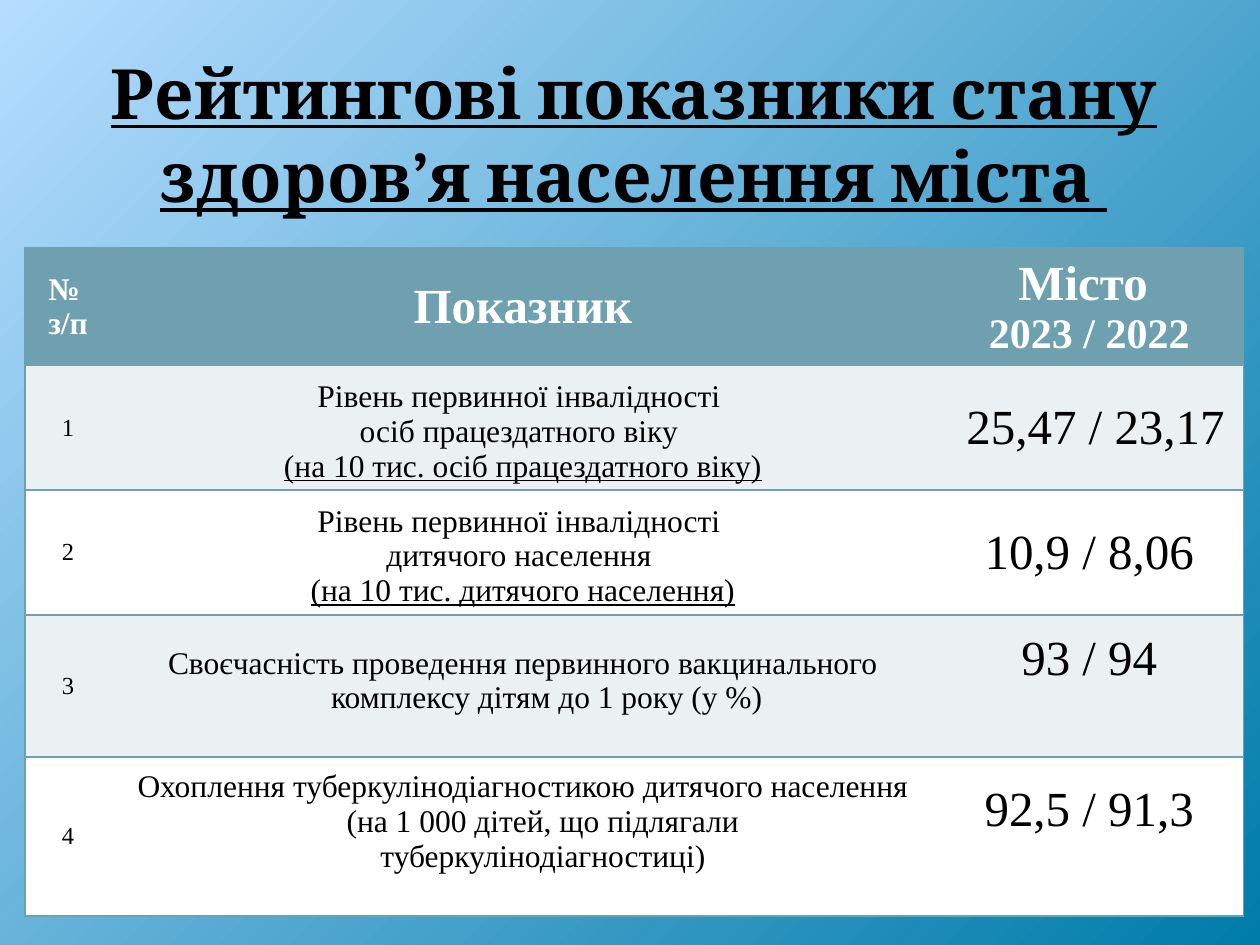
from lxml import etree
from pptx import Presentation
from pptx.dml.color import RGBColor
from pptx.enum import text as t
from pptx.oxml import ns
from pptx.util import Inches, Pt

# Content
TITLE = "Рейтингові показники стану здоров’я населення міста "
HEAD = (["№ ", "з/п"], ["Показник"], ["Місто ", "2023 / 2022"])
ROWS = [
    ("1", ["Рівень первинної інвалідності ", "осіб працездатного віку ",
           "(на 10 тис. осіб працездатного віку)"], "25,47 / 23,17"),
    ("2", ["Рівень первинної інвалідності ", "дитячого населення ",
           "(на 10 тис. дитячого населення)"], "10,9 / 8,06"),
    ("3", ["Своєчасність проведення первинного вакцинального "
           "комплексу дітям до 1 року (у %)"], "93 / 94"),
    ("4", ["Охоплення туберкулінодіагностикою дитячого населення "
           "(на 1 000 дітей, що підлягали ",
           "туберкулінодіагностиці)"], "92,5 / 91,3"),
]
WIDTHS = [0.68, 6.54, 2.45]
HEIGHTS = [0.93, 0.99, 0.99, 1.13, 1.26]
TEAL, PALE, WHITE, BLACK = "6EA0B0", "EBF0F2", "FFFFFF", "000000"
HANG = (0.38, -0.38)
PLAIN = "{2D5ABB26-0587-4C30-8999-92F81FD0307C}"


def rgb(code):
    return RGBColor.from_string(code)


def add(root, tag, **attrs):
    return etree.SubElement(root, ns.qn(tag), attrs)


def style(para, size, color, bold=False, under=False, face="Times New Roman"):
    para.alignment = t.PP_ALIGN.CENTER
    font = para.font
    font.name, font.size, font.bold = face, Pt(size), bold
    font.underline = under
    font.color.rgb = rgb(color)


def indent(para, left, first):
    props = para._p.get_or_add_pPr()
    props.set("marL", str(Inches(left)))
    props.set("indent", str(Inches(first)))


def border(cell, sides):
    props = cell._tc.get_or_add_tcPr()
    for side in sides:
        line = add(props, "a:ln" + side, w=str(Pt(1)))
        add(add(line, "a:solidFill"), "a:srgbClr", val=TEAL)


def write(cell, lines, sizes, color, bold=False):
    cell.text = "\n".join(lines)
    for para, size in zip(cell.text_frame.paragraphs, sizes):
        indent(para, *HANG)
        style(para, size, color, bold)


prs = Presentation()
prs.slide_width, prs.slide_height = Inches(10), Inches(7.5)
slide = prs.slides.add_slide(prs.slide_layouts[5])

# Background: glow from the top left corner
fill = slide.background.fill
fill.gradient()
for stop, code in zip(fill.gradient_stops, ("B5DDFF", "007CAA")):
    stop.color.rgb = rgb(code)
grad = slide.background._cSld.find(".//" + ns.qn("a:gradFill"))
grad.remove(grad.find(ns.qn("a:lin")))
add(add(grad, "a:path", path="circle"), "a:fillToRect", r="100000", b="100000")

# Title
title = slide.shapes.title
title.left, title.top = Inches(0.53), Inches(0.72)
title.width, title.height = Inches(9), Inches(1.25)
frame = title.text_frame
frame.text = TITLE
frame.word_wrap, frame.auto_size = True, t.MSO_AUTO_SIZE.NONE
frame.vertical_anchor = t.MSO_ANCHOR.MIDDLE
frame.margin_bottom = Inches(0.62)
style(frame.paragraphs[0], 39.6, BLACK, True, True, "Cambria")

# Table grid
grid = slide.shapes.add_table(len(HEIGHTS), len(WIDTHS), Inches(0.2), Inches(1.97),
                              Inches(sum(WIDTHS)), Inches(sum(HEIGHTS))).table
grid._tbl.tblPr.find(ns.qn("a:tableStyleId")).text = PLAIN
for col, width in zip(grid.columns, WIDTHS):
    col.width = Inches(width)
for r, height in enumerate(HEIGHTS):
    grid.rows[r].height = Inches(height)
    for c, sides in enumerate(("LTB", "TB", "RTB")):
        cell = grid.cell(r, c)
        border(cell, sides)
        cell.fill.solid()
        cell.fill.fore_color.rgb = rgb(TEAL if r == 0 else PALE if r % 2 else WHITE)
        cell.vertical_anchor = t.MSO_ANCHOR.MIDDLE

# Table text
for c, (lines, sizes) in enumerate(zip(HEAD, ([18, 18], [28], [28, 24]))):
    write(grid.cell(0, c), lines, sizes, WHITE, True)
for r, (num, lines, value) in enumerate(ROWS, 1):
    label, score = grid.cell(r, 1), grid.cell(r, 2)
    write(grid.cell(r, 0), [num], [14], BLACK)
    write(label, lines, [18] * len(lines), BLACK)
    write(score, [value], [28], BLACK)
    label.vertical_anchor = t.MSO_ANCHOR.BOTTOM
    if len(lines) == 3:
        label.text_frame.paragraphs[-1].font.underline = True
    else:
        label.margin_bottom, score.margin_bottom = Inches(0.33), Inches(0.48)

# Lines set slightly right of centre
indent(grid.cell(1, 2).text_frame.paragraphs[0], 0.1, 0)
indent(grid.cell(4, 1).text_frame.paragraphs[-1], 0.32, 0)

prs.save("out.pptx")
